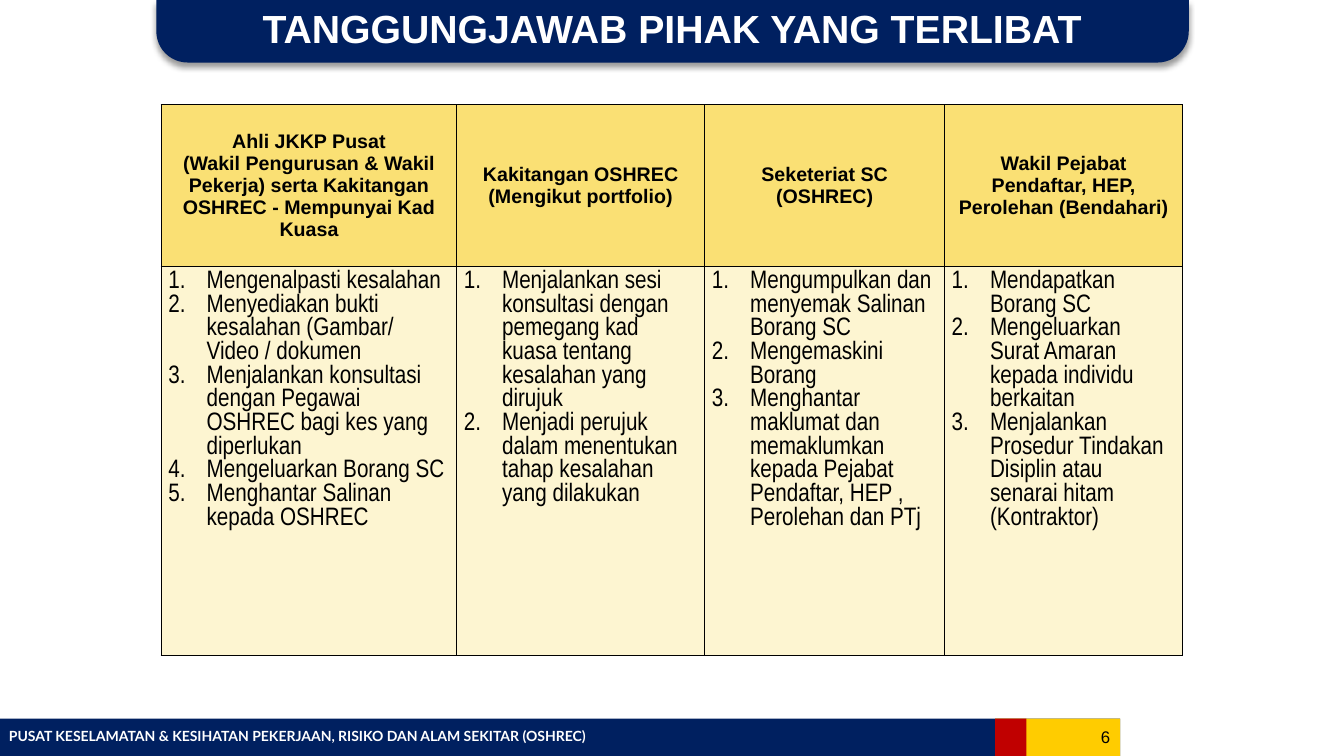
from lxml.etree import SubElement as Sub
from pptx import Presentation
from pptx.dml.color import RGBColor as Rgb
from pptx.enum.shapes import MSO_SHAPE as Kind
from pptx.enum.text import MSO_ANCHOR as Anchor, PP_ALIGN as Align
from pptx.oxml import parse_xml
from pptx.oxml.ns import nsdecls, qn
from pptx.util import Inches, Pt

HUES = {"navy": "002060", "gold": "FFCC00", "red": "C00000", "white": "FFFFFF",
        "black": "000000", "head": "FAE074", "body": "FDF5D1"}
INDENT = 0.38

# Each column: width, heading lines, numbered duties
DUTIES = [
    (2.93, ["Ahli JKKP Pusat",
            "(Wakil Pengurusan & Wakil Pekerja) serta Kakitangan OSHREC - Mempunyai Kad Kuasa"],
     ["Mengenalpasti kesalahan",
      "Menyediakan bukti kesalahan (Gambar/ Video / dokumen",
      "Menjalankan konsultasi dengan Pegawai OSHREC bagi kes yang diperlukan",
      "Mengeluarkan Borang SC",
      "Menghantar Salinan kepada OSHREC"]),
    (2.46, ["Kakitangan OSHREC (Mengikut portfolio)"],
     ["Menjalankan sesi konsultasi dengan pemegang kad kuasa tentang kesalahan yang dirujuk",
      "Menjadi perujuk dalam menentukan tahap kesalahan yang dilakukan"]),
    (2.38, ["Seketeriat SC (OSHREC)"],
     ["Mengumpulkan dan menyemak Salinan Borang SC",
      "Mengemaskini Borang",
      "Menghantar maklumat dan memaklumkan kepada Pejabat Pendaftar, HEP , "
      "Perolehan dan PTj"]),
    (2.36, ["Wakil Pejabat Pendaftar, HEP, Perolehan (Bendahari)"],
     ["Mendapatkan Borang SC",
      "Mengeluarkan Surat Amaran kepada individu berkaitan",
      "Menjalankan Prosedur Tindakan Disiplin atau senarai hitam (Kontraktor)"]),
]


def hue(name):
    return Rgb.from_string(HUES[name])


def add_run(para, text, size, face, color, bold=False):
    run = para.add_run()
    run.text = text
    font = run.font
    font.size, font.name, font.bold = Pt(size), face, bold
    font.color.rgb = hue(color)


def add_block(slide, kind, box, color):
    shape = slide.shapes.add_shape(kind, *map(Inches, box))
    shape.shadow.inherit = False
    shape.fill.solid()
    shape.fill.fore_color.rgb = hue(color)
    shape.line.fill.background()
    return shape


def add_label(slide, box, text, align, *style):
    frame = slide.shapes.add_textbox(*map(Inches, box)).text_frame
    frame.word_wrap = True
    frame.vertical_anchor = Anchor.MIDDLE
    para = frame.paragraphs[0]
    para.alignment = align
    add_run(para, text, *style)


def add_title(slide, box):
    left, top, width, height = box
    bar = add_block(slide, Kind.ROUND_2_SAME_RECTANGLE, box, "navy")
    bar.adjustments[0], bar.adjustments[1] = 0.5, 0
    bar.rotation = 180
    # Soft shadow below the bar
    glow = bar._element.spPr.find(qn("a:effectLst"))
    shade = Sub(glow, qn("a:outerShdw"), blurRad=str(Pt(4)), dist=str(Pt(3)),
                dir="5400000", algn="t", rotWithShape="0")
    tint = Sub(shade, qn("a:srgbClr"), val=HUES["black"])
    Sub(tint, qn("a:alpha"), val="40000")
    add_label(slide, (left + 0.31, top + 0.05, width - 0.63, 0.45),
              "TANGGUNGJAWAB PIHAK YANG TERLIBAT", Align.CENTER,
              28, "Arial", "white", True)


def add_footer(slide, box):
    left, top, width, height = box
    right = left + width
    add_block(slide, Kind.RECTANGLE, box, "navy")
    add_block(slide, Kind.RECTANGLE, (right - 1.24, top, 1.24, height), "gold")
    add_block(slide, Kind.RECTANGLE, (right - 1.24, top, 0.31, height), "red")
    add_label(slide, (left - 0.01, top + 0.04, 9.29, 0.27),
              "PUSAT KESELAMATAN & KESIHATAN PEKERJAAN, RISIKO DAN ALAM SEKITAR (OSHREC)",
              Align.LEFT, 10, "Lato", "white", True)
    add_label(slide, (right - 1.13, top, 1.13, 0.35), "6", Align.RIGHT,
              12, "Arial", "black")


def set_cell(cell, color):
    cell.margin_left = cell.margin_right = Inches(0.07)
    cell.margin_top = cell.margin_bottom = Inches(0.04)
    cell.fill.solid()
    cell.fill.fore_color.rgb = hue(color)
    props = cell._tc.get_or_add_tcPr()
    for spot, side in enumerate("LRTB"):
        props.insert(spot, parse_xml(
            f'<a:ln{side} {nsdecls("a")} w="{Pt(1)}"><a:solidFill>'
            f'<a:srgbClr val="{HUES["black"]}"/></a:solidFill></a:ln{side}>'))


def fill_head(cell, lines):
    set_cell(cell, "head")
    cell.vertical_anchor = Anchor.MIDDLE
    para = cell.text_frame.paragraphs[0]
    para.alignment = Align.CENTER
    for row, line in enumerate(lines):
        if row:
            para.add_line_break()
        add_run(para, line, 14, "Arial", "black", True)


def fill_list(cell, items):
    set_cell(cell, "body")
    frame = cell.text_frame
    for row, item in enumerate(items):
        para = frame.add_paragraph() if row else frame.paragraphs[0]
        props = para._p.get_or_add_pPr()
        props.set("marL", str(Inches(INDENT)))
        props.set("indent", str(-Inches(INDENT)))
        Sub(props, qn("a:buFont"), typeface="+mj-lt")
        Sub(props, qn("a:buAutoNum"), type="arabicPeriod")
        add_run(para, item, 18, "Arial Narrow", "black")


def add_duties(slide, box):
    grid = slide.shapes.add_table(2, len(DUTIES), *map(Inches, box)).table
    head = 1.6
    grid.rows[0].height = Inches(head)
    grid.rows[1].height = Inches(box[3] - head)
    for col, (width, lines, items) in enumerate(DUTIES):
        grid.columns[col].width = Inches(width)
        fill_head(grid.cell(0, col), lines)
        fill_list(grid.cell(1, col), items)


def main():
    deck = Presentation()
    deck.slide_width, deck.slide_height = Inches(13.33), Inches(7.5)
    slide = deck.slides.add_slide(deck.slide_layouts[6])
    add_title(slide, (1.55, 0, 10.24, 0.62))
    add_footer(slide, (0, 7.13, 11.11, 0.37))
    add_duties(slide, (1.6, 1.04, 10.13, 5.46))
    deck.save("out.pptx")


if __name__ == "__main__":
    main()
